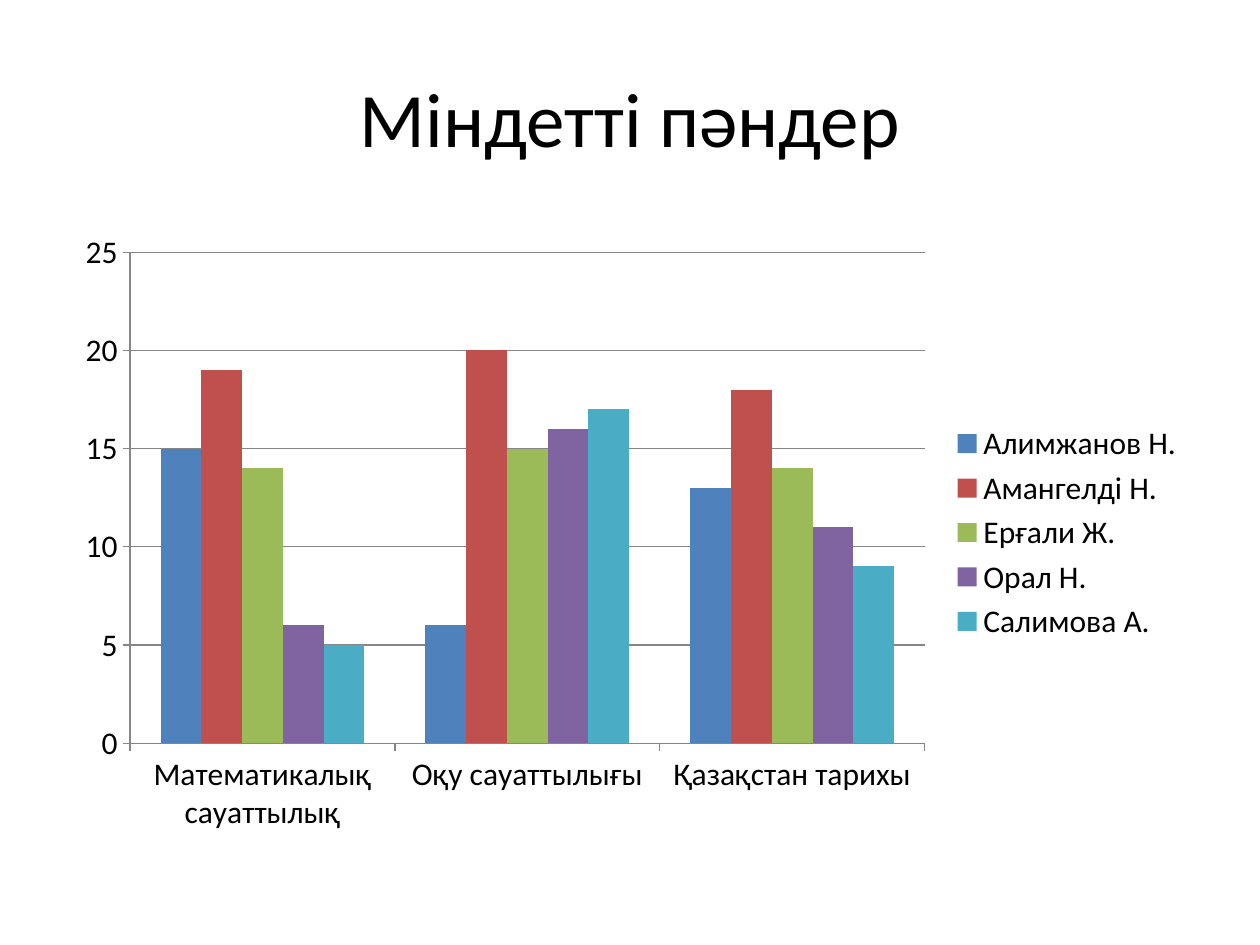
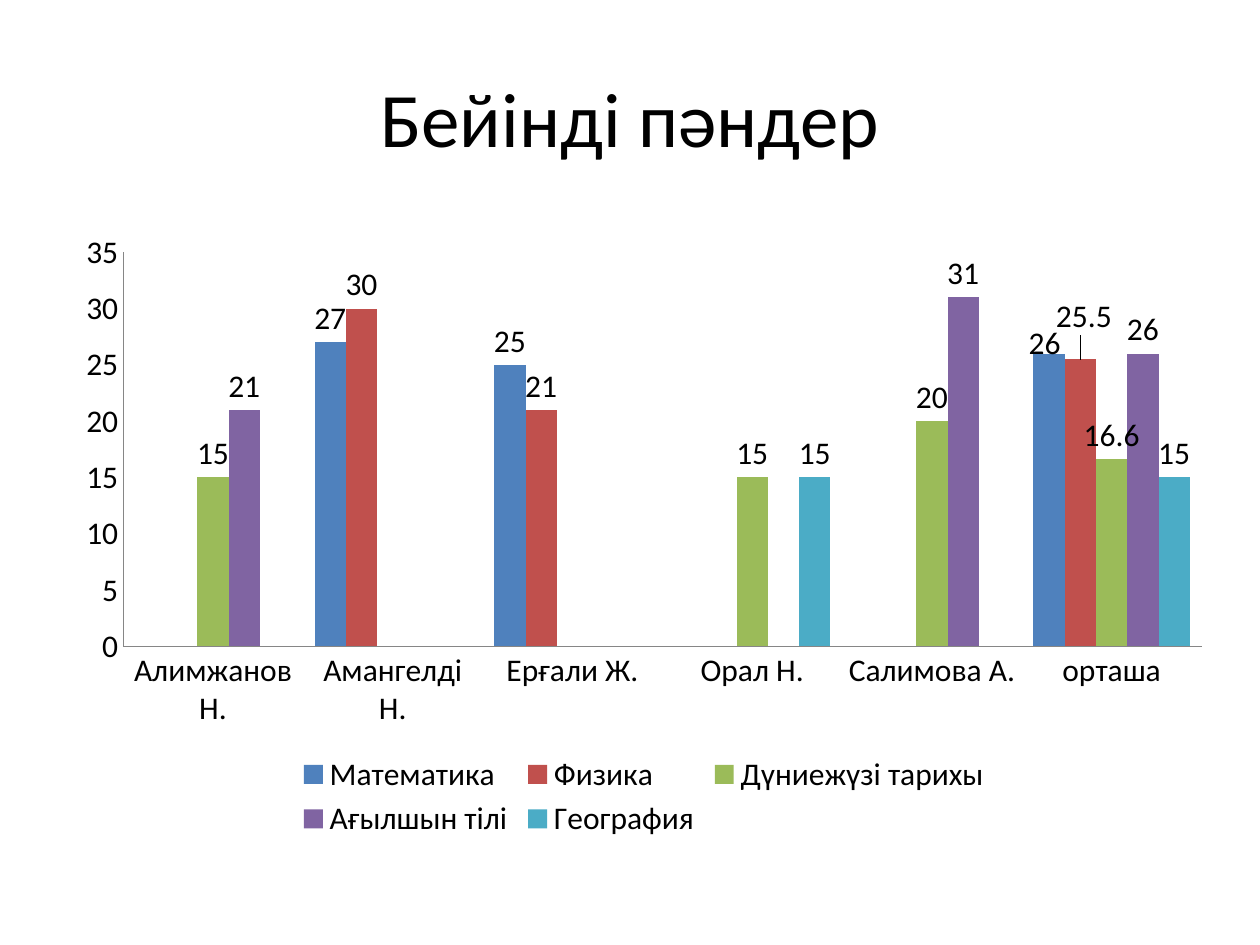
from lxml import etree
from pptx import Presentation, util as u
from pptx.chart.data import CategoryChartData
from pptx.dml.color import RGBColor
from pptx.enum import chart as ch, text
from pptx.oxml.ns import qn

HUES = {"ink": "000000", "line": "868686"}
BARS = ["4F81BD", "C0504D", "9BBB59", "8064A2", "4BACC6"]
FACE = "Calibri"
PUPILS = ["Алимжанов Н.", "Амангелді Н.", "Ерғали Ж.", "Орал Н.", "Салимова А."]
MARKS = [[15, 6, 13], [19, 20, 18], [14, 15, 14], [6, 16, 11], [5, 17, 9]]
TICK, SIDE = ch.XL_TICK_MARK, ch.XL_LEGEND_POSITION

SLIDES = [
    {
        "title": "Міндетті пәндер",
        "cats": ["Математикалық сауаттылық", "Оқу сауаттылығы", "Қазақстан тарихы"],
        "rows": list(zip(PUPILS, MARKS)),
        "wide": 22.86, "gap": 150, "top": 25, "grid": True, "labels": False,
        "tick": TICK.OUTSIDE, "key": SIDE.RIGHT, "moved": {},
    },
    {
        "title": "Бейінді пәндер",
        "cats": PUPILS + ["орташа"],
        "rows": [
            ("Математика", [None, 27, 25, None, None, 26]),
            ("Физика", [None, 30, 21, None, None, 25.5]),
            ("Дүниежүзі тарихы", [15, None, None, 15, 20, 16.6]),
            ("Ағылшын тілі", [21, None, None, None, 31, 26]),
            ("География", [None, None, None, 15, None, 15]),
        ],
        "wide": 23.42, "gap": 75, "top": 35, "grid": False, "labels": True,
        "tick": TICK.NONE, "key": SIDE.BOTTOM,
        "moved": {(0, 5): (-0.004, 0.022), (1, 5): (0.003, -0.03)},
    },
]


def put(item, vals):
    for name, val in vals.items():
        setattr(item, name, val)


def ink(font, size):
    put(font, {"name": FACE, "size": u.Pt(size), "bold": False})
    font.color.rgb = RGBColor.from_string(HUES["ink"])


def rule(line):
    line.color.rgb = RGBColor.from_string(HUES["line"])
    line.width = u.Pt(0.75)


def head(slide, words):
    box = slide.shapes.title
    put(box, {"left": u.Cm(1.27), "top": u.Cm(0.76),
              "width": u.Cm(22.86), "height": u.Cm(3.18)})
    frame = box.text_frame
    put(frame, {"text": words, "word_wrap": True,
                "vertical_anchor": text.MSO_ANCHOR.MIDDLE})
    para = frame.paragraphs[0]
    para.alignment = text.PP_ALIGN.CENTER
    ink(para.runs[0].font, 44)


def shift(series, spot, move):
    label = series.points[spot].data_label
    ink(label.font, 18)
    label.position = ch.XL_LABEL_POSITION.OUTSIDE_END
    node = next(n for n in series.data_labels._element.findall(qn("c:dLbl"))
                if n.find(qn("c:idx")).get("val") == str(spot))
    lay = etree.Element(qn("c:layout"))
    hand = etree.SubElement(lay, qn("c:manualLayout"))
    for axis, val in zip("xy", move):
        etree.SubElement(hand, qn("c:" + axis)).set("val", str(val))
    node.find(qn("c:idx")).addnext(lay)


def plot(slide, page):
    data = CategoryChartData()
    data.categories = page["cats"]
    for name, vals in page["rows"]:
        data.add_series(name, vals)
    chart = slide.shapes.add_chart(
        ch.XL_CHART_TYPE.COLUMN_CLUSTERED, u.Cm(1.27), u.Cm(4.45),
        u.Cm(page["wide"]), u.Cm(12.57), data).chart
    put(chart, {"has_title": False, "has_legend": True})
    ink(chart.font, 18)
    put(chart.legend, {"position": page["key"], "include_in_layout": False})
    for axis in (chart.category_axis, chart.value_axis):
        put(axis, {"major_tick_mark": page["tick"], "minor_tick_mark": TICK.NONE,
                   "has_major_gridlines": False})
        rule(axis.format.line)
    put(chart.value_axis, {"minimum_scale": 0, "maximum_scale": page["top"],
                           "major_unit": 5, "has_major_gridlines": page["grid"]})
    if page["grid"]:
        rule(chart.value_axis.major_gridlines.format.line)
    bars = chart.plots[0]
    put(bars, {"gap_width": page["gap"], "overlap": 0, "vary_by_categories": False})
    for series, hue in zip(bars.series, BARS):
        series.format.fill.solid()
        series.format.fill.fore_color.rgb = RGBColor.from_string(hue)
        if page["labels"]:
            put(series.data_labels, {"show_value": True,
                                     "position": ch.XL_LABEL_POSITION.OUTSIDE_END})
            ink(series.data_labels.font, 18)
    for (row, spot), move in page["moved"].items():
        shift(bars.series[row], spot, move)


def main():
    deck = Presentation()
    put(deck, {"slide_width": u.Cm(25.4), "slide_height": u.Cm(19.05)})
    for page in SLIDES:
        slide = deck.slides.add_slide(deck.slide_layouts[5])
        head(slide, page["title"])
        plot(slide, page)
    deck.save("out.pptx")


if __name__ == "__main__":
    main()
